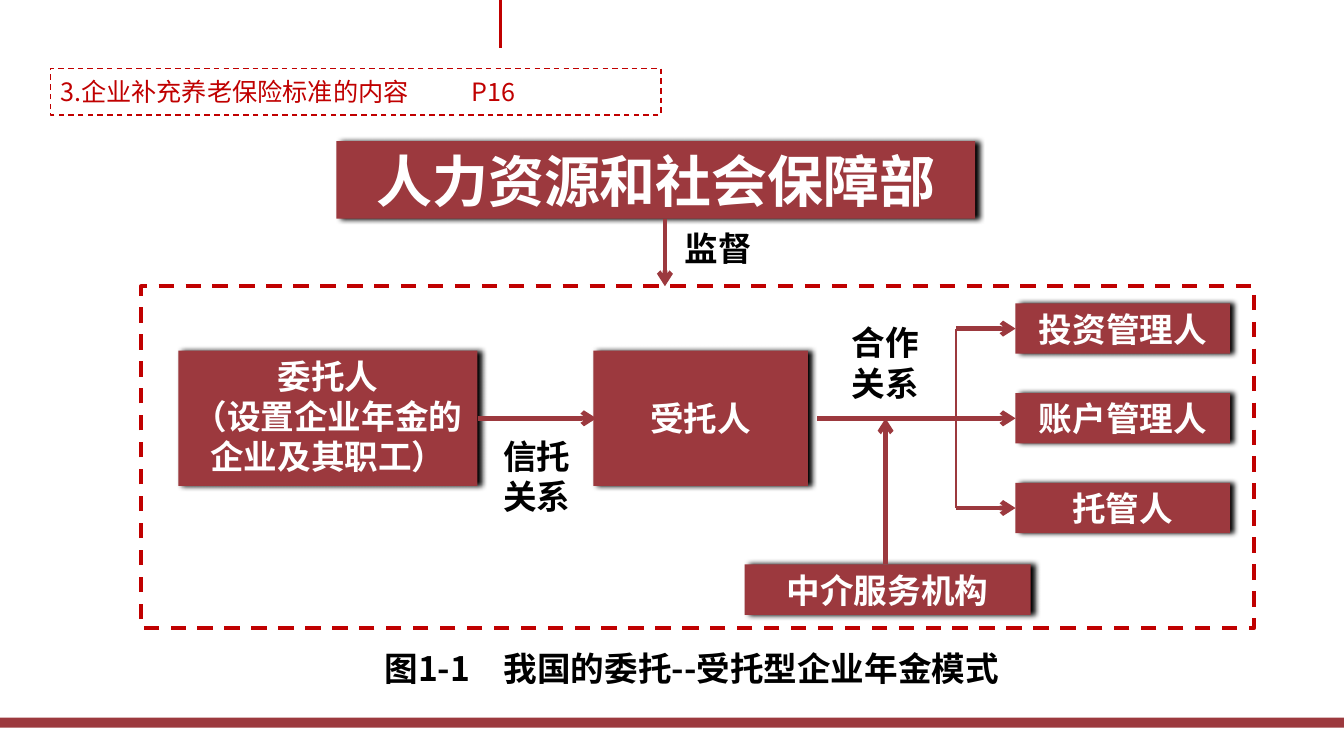
from dataclasses import dataclass

from lxml import etree
from pptx import Presentation
from pptx import util as u
from pptx.dml.color import RGBColor
from pptx.enum import dml, shapes, text
from pptx.oxml import ns


@dataclass(frozen=True)
class Theme:
    font: str = "Noto Sans CJK SC"
    brick: str = "9C393E"
    red: str = "C00000"
    white: str = "FFFFFF"
    black: str = "000000"
    heading: int = 18
    body: int = 24
    banner: int = 40
    thin: float = 1
    medium: float = 2
    frame: float = 2.75
    arrow: float = 3.25


def add_xml(parent, tag, **attributes):
    return etree.SubElement(parent, ns.qn(tag), attributes)


class Diagram:
    def __init__(self, slide, theme):
        self.slide = slide
        self.theme = theme

    def set_words(self, shape, words, size, color, bold=True,
                  align=text.PP_ALIGN.CENTER, anchor=text.MSO_ANCHOR.MIDDLE):
        frame = shape.text_frame
        frame.word_wrap = True
        frame.vertical_anchor = anchor
        frame.text = words
        for paragraph in frame.paragraphs:
            paragraph.alignment = align
            for run in paragraph.runs:
                run.font.size = u.Pt(size)
                run.font.bold = bold
                run.font.color.rgb = RGBColor.from_string(color)
                run.font.name = self.theme.font
                add_xml(run.font._element, "a:ea", typeface=self.theme.font)

    def rectangle(self, left, top, width, height):
        shape = self.slide.shapes.add_shape(
            shapes.MSO_SHAPE.RECTANGLE, *map(u.Inches, (left, top, width, height)))
        shape.shadow.inherit = False
        return shape

    def bar(self, *place):
        shape = self.rectangle(*place)
        shape.fill.solid()
        shape.fill.fore_color.rgb = RGBColor.from_string(self.theme.brick)
        shape.line.fill.background()
        return shape

    def party(self, words, *place, size=None, anchor=text.MSO_ANCHOR.MIDDLE):
        """Add a filled box with a hard shadow to its right."""
        shape = self.bar(*place)
        effects = shape._element.spPr.find(ns.qn("a:effectLst"))
        shadow = add_xml(effects, "a:outerShdw", blurRad=str(u.Pt(4)),
                         dist=str(u.Pt(3)), dir="0", algn="ctr", rotWithShape="0")
        add_xml(shadow, "a:srgbClr", val=self.theme.black)
        self.set_words(shape, words, size or self.theme.body, self.theme.white,
                       anchor=anchor)

    def outline(self, *place, weight):
        shape = self.rectangle(*place)
        shape.fill.background()
        shape.line.color.rgb = RGBColor.from_string(self.theme.red)
        shape.line.width = u.Pt(weight)
        shape.line.dash_style = dml.MSO_LINE.DASH
        return shape

    def heading(self, words, *place, tab):
        shape = self.outline(*place, weight=self.theme.thin)
        self.set_words(shape, words, self.theme.heading, self.theme.red, bold=False,
                       align=text.PP_ALIGN.LEFT)
        properties = shape.text_frame.paragraphs[0]._p.get_or_add_pPr()
        stops = add_xml(properties, "a:tabLst")
        add_xml(stops, "a:tab", pos=str(u.Inches(tab)), algn="l")

    def label(self, words, *place):
        box = self.slide.shapes.add_textbox(*map(u.Inches, place))
        self.set_words(box, words, self.theme.body, self.theme.black)

    def line(self, *ends, color, weight):
        connector = self.slide.shapes.add_connector(
            shapes.MSO_CONNECTOR.STRAIGHT, *map(u.Inches, ends))
        connector.line.color.rgb = RGBColor.from_string(color)
        connector.line.width = u.Pt(weight)
        add_xml(connector._element.spPr, "a:effectLst")
        return connector

    def arrow(self, *ends):
        connector = self.line(*ends, color=self.theme.brick, weight=self.theme.arrow)
        add_xml(connector.line._get_or_add_ln(), "a:tailEnd", type="arrow")


def main():
    theme = Theme()
    deck = Presentation()
    deck.slide_width, deck.slide_height = u.Inches(13.34), u.Inches(7.5)
    diagram = Diagram(deck.slides.add_slide(deck.slide_layouts[6]), theme)

    diagram.bar(0, 7.12, 13.34, 0.1)
    diagram.heading("3.企业补充养老保险标准的内容\tP16", 0.5, 0.68, 6.06, 0.46, tab=4.08)

    diagram.party("人力资源和社会保障部", 3.34, 1.4, 6.34, 0.77, size=theme.banner)
    diagram.party("委托人\n（设置企业年金的企业及其职工）", 1.77, 3.48, 2.97, 1.34,
                  anchor=text.MSO_ANCHOR.TOP)
    diagram.party("受托人", 5.89, 3.48, 2.13, 1.34)
    diagram.party("中介服务机构", 7.39, 5.6, 2.84, 0.5)

    diagram.label("合作关系", 8.26, 3.2, 1.06, 0.79)
    diagram.label("信托关系", 4.8, 4.27, 1.06, 0.91)
    diagram.label("监督", 6.6, 2.21, 1.06, 0.5)

    axis, pitch = 4.15, 0.89
    branch, managers_left, manager_height = 9.49, 10.08, 0.5
    managers = (("投资管理人", branch), ("账户管理人", 8.11), ("托管人", branch))
    for row, (manager, start) in enumerate(managers, -1):
        middle = axis + row * pitch
        diagram.party(manager, managers_left, middle - manager_height / 2,
                      2.13, manager_height)
        diagram.arrow(start, middle, managers_left, middle)
    diagram.line(branch, axis - pitch, branch, axis + pitch,
                 color=theme.brick, weight=theme.medium)

    diagram.arrow(4.74, axis, 5.92, axis)
    diagram.arrow(6.6, 2.17, 6.6, 2.84)
    diagram.arrow(8.79, 5.6, 8.79, axis)

    diagram.outline(1.4, 2.84, 11.05, 3.39, weight=theme.frame)
    diagram.label("图1-1　我国的委托--受托型企业年金模式", 3.21, 6.38, 7.31, 0.5)
    diagram.line(4.97, 0, 4.97, 0.48, color=theme.red, weight=theme.medium)

    deck.save("out.pptx")


if __name__ == "__main__":
    main()
